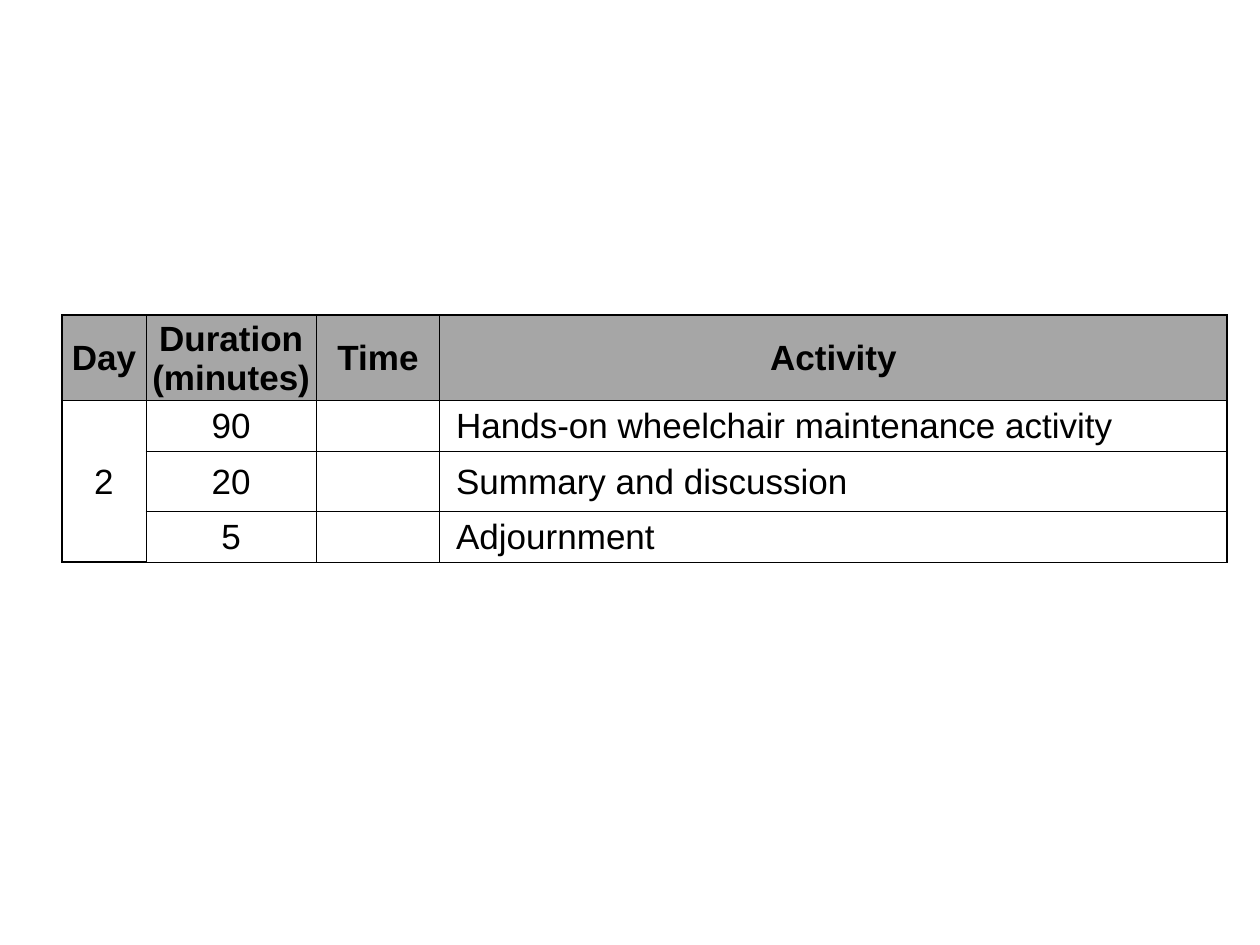
from lxml import etree
from pptx import Presentation
from pptx.dml.color import RGBColor
from pptx.enum import text
from pptx.oxml.ns import qn
from pptx.util import Inches, Pt

BLACK = RGBColor(0x00, 0x00, 0x00)
HEADER_GRAY = RGBColor(0xA6, 0xA6, 0xA6)

COLUMN_WIDTHS = [0.67, 1.35, 0.98, 6.25]
ROW_HEIGHTS = [0.68, 0.4, 0.48, 0.4]
AGENDA = [
    ["Day", "Duration (minutes)", "Time", "Activity"],
    ["2", "90", "", "Hands-on wheelchair maintenance activity"],
    ["", "20", "", "Summary and discussion"],
    ["", "5", "", "Adjournment"],
]
ACTIVITY = len(COLUMN_WIDTHS) - 1
LAST_ROW = len(AGENDA) - 1


def add_border(cell, side, points):
    line = etree.SubElement(cell._tc.get_or_add_tcPr(), qn(f"a:ln{side}"), w=str(Pt(points)))
    fill = etree.SubElement(line, qn("a:solidFill"))
    etree.SubElement(fill, qn("a:srgbClr"), val=str(BLACK))


prs = Presentation()
prs.slide_width, prs.slide_height = Inches(10), Inches(7.5)
slide = prs.slides.add_slide(prs.slide_layouts[6])

agenda = slide.shapes.add_table(
    len(AGENDA), len(COLUMN_WIDTHS), Inches(0.49), Inches(2.5),
    Inches(sum(COLUMN_WIDTHS)), Inches(sum(ROW_HEIGHTS))).table
for column, width in zip(agenda.columns, COLUMN_WIDTHS):
    column.width = Inches(width)
for row, height in zip(agenda.rows, ROW_HEIGHTS):
    row.height = Inches(height)
agenda.cell(1, 0).merge(agenda.cell(LAST_ROW, 0))

for r, entries in enumerate(AGENDA):
    for c, entry in enumerate(entries):
        cell = agenda.cell(r, c)
        cell.margin_left = cell.margin_right = cell.margin_top = Inches(0.01)
        cell.margin_bottom = 0
        cell.vertical_anchor = text.MSO_ANCHOR.MIDDLE

        add_border(cell, "L", 1 if c == 0 else 0.5)
        add_border(cell, "R", 1 if c == ACTIVITY else 0.5)
        add_border(cell, "T", 1 if r == 0 else 0.5)
        add_border(cell, "B", 1 if c == 0 and r > 0 else 0.5)
        if r == 0:
            cell.fill.solid()
            cell.fill.fore_color.rgb = HEADER_GRAY
        else:
            cell.fill.background()

        if not entry:
            continue
        paragraph = cell.text_frame.paragraphs[0]
        if r > 0 and c == ACTIVITY:
            paragraph.alignment = text.PP_ALIGN.LEFT
            paragraph._p.get_or_add_pPr().set("marL", str(Inches(0.12)))
        else:
            paragraph.alignment = text.PP_ALIGN.CENTER
        run = paragraph.add_run()
        run.text = entry
        run.font.name = "Arial"
        run.font.size = Pt(20)
        run.font.bold = r == 0
        run.font.color.rgb = BLACK

prs.save("out.pptx")
